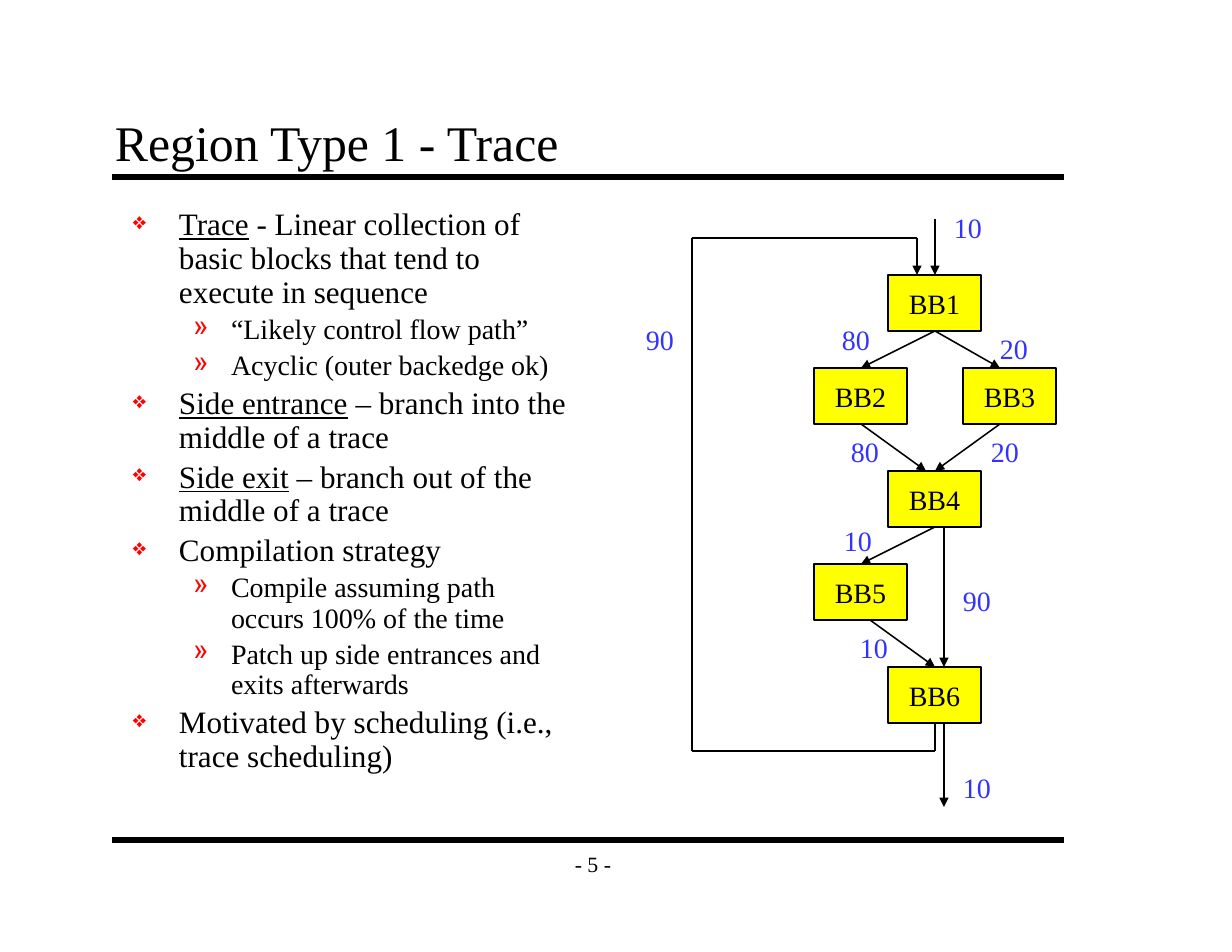
from lxml import etree
from pptx import Presentation
from pptx.dml.color import RGBColor
from pptx.enum.shapes import MSO_CONNECTOR, MSO_SHAPE
from pptx.enum.text import MSO_ANCHOR, PP_ALIGN
from pptx.oxml.ns import qn
from pptx.util import Emu, Pt

STRAIGHT = MSO_CONNECTOR.STRAIGHT
RECTANGLE = MSO_SHAPE.RECTANGLE
TOP, MIDDLE, BOTTOM = MSO_ANCHOR.TOP, MSO_ANCHOR.MIDDLE, MSO_ANCHOR.BOTTOM
LEFT, CENTER = PP_ALIGN.LEFT, PP_ALIGN.CENTER

EMU_PER_PX = 914400 / 112
FONT = "Times New Roman"
COLORS = {"black": "000000", "block": "FFFF00", "count": "3333FF", "bullet": "FF0000"}
BLOCK_WIDTH, BLOCK_HEIGHT = 93, 56

# level: (font size, left margin, hanging indent, bullet, bullet size)
LEVELS = [(20, 46, 46, "❖", 75), (18, 98, 38, "»", 100)]
BULLETS = [
    (0, "Trace", " - Linear collection of basic blocks that tend to execute in sequence"),
    (1, "", "“Likely control flow path”"),
    (1, "", "Acyclic (outer backedge ok)"),
    (0, "Side entrance", " – branch into the middle of a trace"),
    (0, "Side exit", " – branch out of the middle of a trace"),
    (0, "", "Compilation strategy"),
    (1, "", "Compile assuming path occurs 100% of the time"),
    (1, "", "Patch up side entrances and exits afterwards"),
    (0, "", "Motivated by scheduling (i.e., trace scheduling)"),
]
BLOCKS = [
    ("BB1", 888, 275), ("BB2", 814, 368), ("BB3", 963, 368),
    ("BB4", 888, 471), ("BB5", 814, 564), ("BB6", 888, 667),
]
ARROWS = [
    (935, 219, 935, 275), (917, 238, 917, 275),
    (935, 331, 861, 368), (935, 331, 1000, 368),
    (861, 424, 926, 471), (1000, 424, 935, 471),
    (935, 527, 861, 564), (870, 620, 935, 667),
    (944, 527, 944, 667), (944, 723, 944, 807),
]
BACKEDGE = [(935, 723), (935, 751), (692, 751), (692, 238), (917, 238)]
COUNTS = [
    ("10", 943, 205), ("90", 635, 317), ("80", 831, 317), ("20", 989, 326),
    ("80", 840, 429), ("20", 980, 429), ("10", 833, 517), ("90", 952, 578),
    ("10", 849, 625), ("10", 952, 765),
]


def px(value):
    """Turn a length in px into EMU."""
    return Emu(round(value * EMU_PER_PX))


def color(name):
    """Look up a named colour."""
    return RGBColor.from_string(COLORS[name])


def style_font(paragraph, size, name="black"):
    """Set the font of a whole paragraph."""
    paragraph.font.name = FONT
    paragraph.font.size = Pt(size)
    paragraph.font.color.rgb = color(name)


def add_frame(slide, left, top, width, height, anchor=TOP, wrap=True, margins=(12, 7)):
    """Add a text box and return its text frame."""
    frame = slide.shapes.add_textbox(px(left), px(top), px(width), px(height)).text_frame
    frame.word_wrap = wrap
    frame.vertical_anchor = anchor
    frame.margin_left = frame.margin_right = px(margins[0])
    frame.margin_top = frame.margin_bottom = px(margins[1])
    return frame


def write_line(frame, text, size, name="black", alignment=LEFT):
    """Fill a text frame with one styled line."""
    paragraph = frame.paragraphs[0]
    paragraph.text = text
    paragraph.alignment = alignment
    style_font(paragraph, size, name)


def add_line(slide, x1, y1, x2, y2, width=1, arrow=False):
    """Add a straight black line, with an arrowhead at its end if asked."""
    line = slide.shapes.add_connector(STRAIGHT, px(x1), px(y1), px(x2), px(y2))
    line.line.color.rgb = color("black")
    line.line.width = Pt(width)
    if arrow:
        etree.SubElement(line.line._get_or_add_ln(), qn("a:tailEnd"), type="triangle")
    etree.SubElement(line._element.spPr, qn("a:effectLst"))


def add_block(slide, text, left, top):
    """Add a basic block of the flow graph."""
    shape = slide.shapes.add_shape(
        RECTANGLE, px(left), px(top), px(BLOCK_WIDTH), px(BLOCK_HEIGHT))
    shape.shadow.inherit = False
    shape.fill.solid()
    shape.fill.fore_color.rgb = color("block")
    shape.line.color.rgb = color("black")
    shape.line.width = Pt(1)
    shape.text_frame.word_wrap = False
    shape.text_frame.vertical_anchor = MIDDLE
    write_line(shape.text_frame, text, 18, alignment=CENTER)


def add_bullet(paragraph, level, term, text):
    """Write a bulleted paragraph with an optional underlined term."""
    size, margin, hanging, bullet, bullet_size = LEVELS[level]
    paragraph.level = level
    paragraph.line_spacing = 0.9
    properties = paragraph._p.get_or_add_pPr()
    properties.set("marL", str(px(margin)))
    properties.set("indent", str(-px(hanging)))
    bullet_color = etree.SubElement(properties, qn("a:buClr"))
    etree.SubElement(bullet_color, qn("a:srgbClr"), val=COLORS["bullet"])
    etree.SubElement(properties, qn("a:buSzPct"), val=str(bullet_size * 1000))
    etree.SubElement(properties, qn("a:buChar"), char=bullet)
    style_font(paragraph, size)
    if term:
        run = paragraph.add_run()
        run.text = term
        run.font.underline = True
    paragraph.add_run().text = text


def add_bullets(slide):
    """Add the bulleted list about traces."""
    frame = add_frame(slide, 121, 202, 461, 638)
    for index, (level, term, text) in enumerate(BULLETS):
        paragraph = frame.add_paragraph() if index else frame.paragraphs[0]
        if index:
            paragraph.space_before = Pt(LEVELS[level][0] * 0.2)
        add_bullet(paragraph, level, term, text)


def add_flow_graph(slide):
    """Add the control flow graph with its execution counts."""
    for text, left, top in BLOCKS:
        add_block(slide, text, left, top)
    for start, end in zip(BACKEDGE, BACKEDGE[1:]):
        add_line(slide, *start, *end)
    for ends in ARROWS:
        add_line(slide, *ends, arrow=True)
    for text, left, top in COUNTS:
        frame = add_frame(slide, left, top, 50, 45, wrap=False, margins=(11, 6))
        write_line(frame, text, 18, "count")


def main():
    """Build the slide and save it."""
    presentation = Presentation()
    presentation.slide_width, presentation.slide_height = px(1232), px(952)
    slide = presentation.slides.add_slide(presentation.slide_layouts[6])
    for y in (177, 840):
        add_line(slide, 112, y, 1064, y, width=4)
    write_line(add_frame(slide, 551, 840, 84, 47, MIDDLE, wrap=False),
               "- 5 -", 14, alignment=CENTER)
    write_line(add_frame(slide, 103, 103, 952, 75, BOTTOM), "Region Type 1 - Trace", 32)
    add_bullets(slide)
    add_flow_graph(slide)
    presentation.save("out.pptx")


if __name__ == "__main__":
    main()
